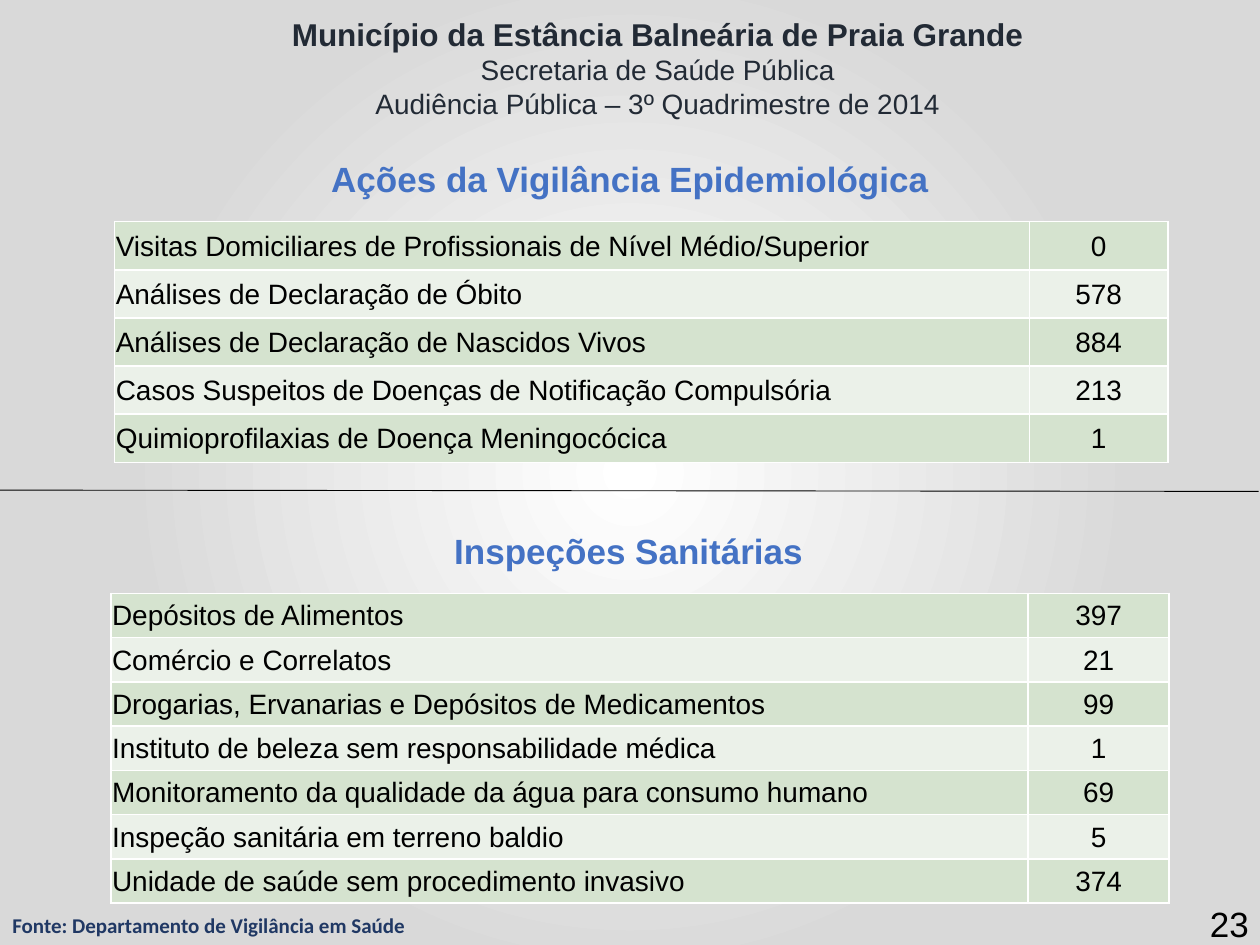
from lxml.etree import SubElement
from pptx import Presentation
from pptx.dml.color import RGBColor
from pptx.enum.shapes import MSO_CONNECTOR
from pptx.enum.text import MSO_ANCHOR, PP_ALIGN
from pptx.oxml import parse_xml
from pptx.oxml.ns import nsdecls, qn
from pptx.util import Inches, Pt

COLORS = {
    "dark": "222A35", "navy": "203864", "blue": "4472C4", "black": "000000",
    "white": "FFFFFF", "gray": "D9D9D9", "odd": "D5E3CF", "even": "EBF1E9",
}
ACTIONS = [
    ("Visitas Domiciliares de Profissionais de Nível Médio/Superior", "0"),
    ("Análises de Declaração de Óbito", "578"),
    ("Análises de Declaração de Nascidos Vivos", "884"),
    ("Casos Suspeitos de Doenças de Notificação Compulsória", "213"),
    ("Quimioprofilaxias de Doença Meningocócica", "1"),
]
CHECKS = [
    ("Depósitos de Alimentos", "397"),
    ("Comércio e Correlatos", "21"),
    ("Drogarias, Ervanarias e Depósitos de Medicamentos", "99"),
    ("Instituto de beleza sem responsabilidade médica", "1"),
    ("Monitoramento da qualidade da água para consumo humano", "69"),
    ("Inspeção sanitária em terreno baldio", "5"),
    ("Unidade de saúde sem procedimento invasivo", "374"),
]


class Deck:
    """Holds the style and the current slide."""

    def __init__(self):
        self.prs = Presentation()
        self.prs.slide_width, self.prs.slide_height = Inches(10), Inches(7.5)
        self.slide = self.prs.slides.add_slide(self.prs.slide_layouts[5])
        self.shapes = self.slide.shapes

    def color(self, name):
        return RGBColor.from_string(COLORS[name])

    def backdrop(self, stops):
        self.slide.background.fill.gradient()
        grad = self.slide.element.find(".//" + qn("a:gradFill"))
        for child in list(grad):
            grad.remove(child)
        items = SubElement(grad, qn("a:gsLst"))
        for pos, name in stops:
            stop = SubElement(items, qn("a:gs"), pos=str(pos * 1000))
            SubElement(stop, qn("a:srgbClr"), val=COLORS[name])
        way = SubElement(grad, qn("a:path"), path="circle")
        SubElement(way, qn("a:fillToRect"), l="50000", t="50000", r="50000", b="50000")

    def style(self, para, size, color, bold=False, align=PP_ALIGN.LEFT, face="Arial"):
        para.alignment = align
        font = para.font
        font.name, font.size, font.bold = face, Pt(size), bold
        font.color.rgb = self.color(color)

    def title(self, text, box):
        shape = self.shapes.title
        shape.left, shape.top, shape.width, shape.height = map(Inches, box)
        shape.text_frame.text = text
        self.style(shape.text_frame.paragraphs[0], 20, "blue", True, PP_ALIGN.CENTER)

    def text(self, lines, box, wrap=True, anchor=MSO_ANCHOR.TOP):
        frame = self.shapes.add_textbox(*map(Inches, box)).text_frame
        frame.word_wrap, frame.vertical_anchor = wrap, anchor
        for i, (words, *look) in enumerate(lines):
            para = frame.add_paragraph() if i else frame.paragraphs[0]
            para.text = words
            self.style(para, *look)

    def line(self, *ends):
        line = self.shapes.add_connector(MSO_CONNECTOR.STRAIGHT, *map(Inches, ends))
        line.line.color.rgb, line.line.width = self.color("black"), Pt(0.5)
        SubElement(line.element.spPr, qn("a:effectLst"))

    def cell(self, cell, text, fill, align):
        cell.text = text
        cell.vertical_anchor = MSO_ANCHOR.MIDDLE
        cell.margin_left = cell.margin_right = cell.margin_top = Inches(0.01)
        cell.margin_bottom = 0
        cell.fill.solid()
        cell.fill.fore_color.rgb = self.color(fill)
        self.style(cell.text_frame.paragraphs[0], 16, "black", align=align)
        props = cell._tc.get_or_add_tcPr()
        for i, side in enumerate("LRTB"):
            props.insert(i, parse_xml(
                f'<a:ln{side} {nsdecls("a")} w="12700"><a:solidFill>'
                f'<a:srgbClr val="{COLORS["white"]}"/></a:solidFill></a:ln{side}>'))

    def table(self, data, box, cols):
        table = self.shapes.add_table(len(data), 2, *map(Inches, box)).table
        table.first_row = table.horz_banding = False
        for col, width in zip(table.columns, cols):
            col.width = Inches(width)
        for i, (row, pair) in enumerate(zip(table.rows, data)):
            row.height = Inches(box[3] / len(data))
            fill = "even" if i % 2 else "odd"
            for cell, text, align in zip(row.cells, pair, (PP_ALIGN.LEFT, PP_ALIGN.CENTER)):
                self.cell(cell, text, fill, align)


def main():
    deck = Deck()
    mid = PP_ALIGN.CENTER
    deck.backdrop([(0, "white"), (65, "gray"), (97, "gray")])
    deck.text([
        ("Município da Estância Balneária de Praia Grande", 18, "dark", True, mid),
        ("Secretaria de Saúde Pública", 16, "dark", False, mid),
        ("Audiência Pública – 3º Quadrimestre de 2014", 16, "dark", False, mid),
    ], (1.13, 0.07, 8.18, 0.94))
    deck.text([("23", 20, "black", False, PP_ALIGN.RIGHT)],
              (7.68, 7.13, 2.33, 0.4), anchor=MSO_ANCHOR.MIDDLE)
    deck.text([("Fonte: Departamento de Vigilância em Saúde", 12, "navy", True,
                PP_ALIGN.LEFT, "Calibri")], (0, 7.19, 3.36, 0.3), wrap=False)
    deck.title("Ações da Vigilância Epidemiológica", (0, 1.2, 10, 0.44))
    deck.table(ACTIONS, (0.91, 1.76, 8.36, 1.91), (7.26, 1.1))
    deck.line(-0.01, 3.89, 9.99, 3.9)
    deck.text([("Inspeções Sanitárias", 20, "blue", True, mid)], (-0.01, 4.15, 10, 0.44))
    deck.table(CHECKS, (0.88, 4.71, 8.39, 2.46), (7.28, 1.12))
    deck.prs.save("out.pptx")


if __name__ == "__main__":
    main()
